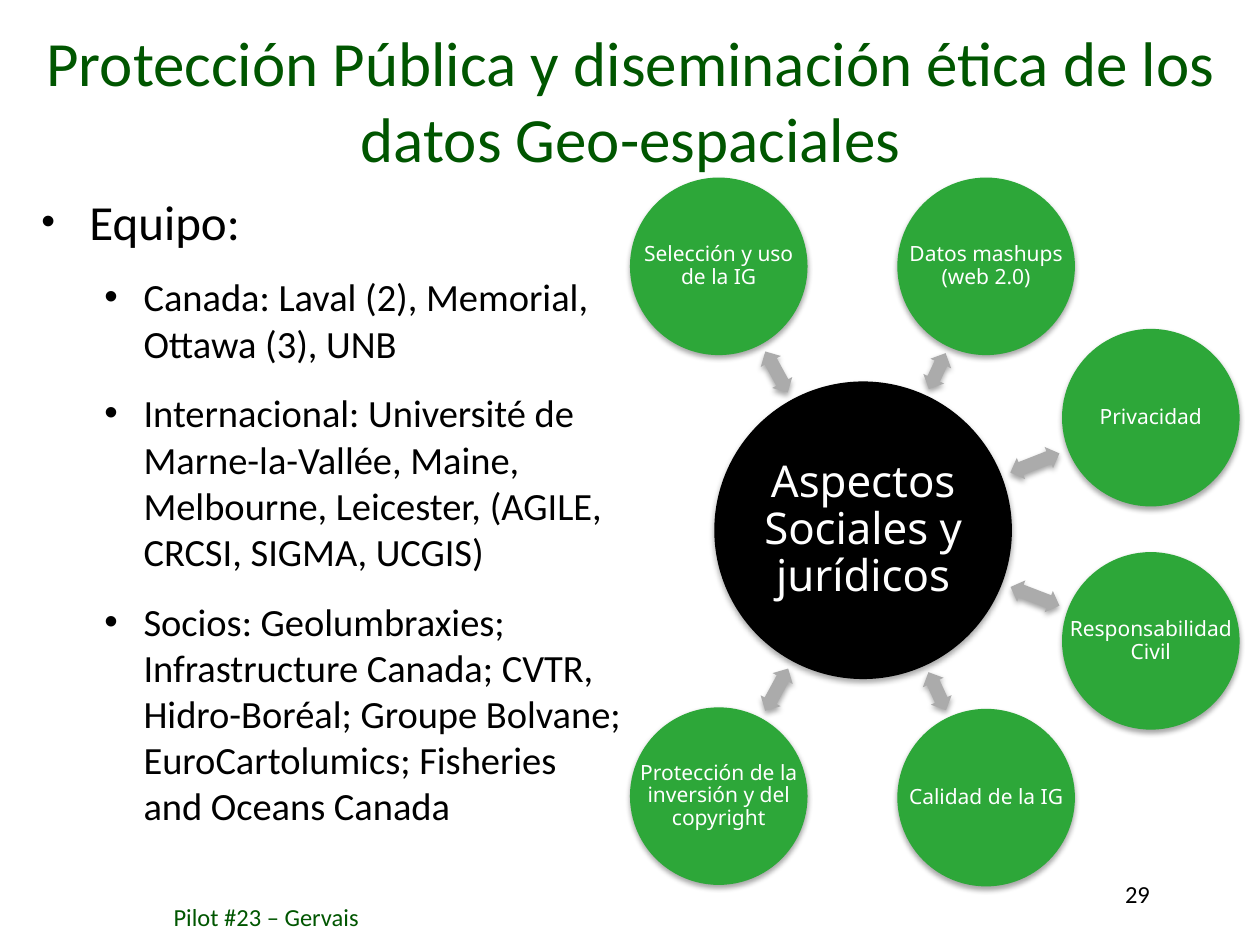
"""Build the slide on ethical dissemination of geospatial data with its hub diagram."""
from math import atan2, degrees, hypot

from lxml.etree import SubElement
from pptx import Presentation
from pptx.dml.color import RGBColor
from pptx.enum.shapes import MSO_SHAPE
from pptx.enum.text import MSO_ANCHOR, MSO_AUTO_SIZE, PP_ALIGN
from pptx.oxml.ns import qn
from pptx.util import Cm, Pt

DARK_GREEN = RGBColor(0x00, 0x56, 0x00)
GREEN = RGBColor(0x2D, 0xA7, 0x39)
GRAY = RGBColor(0xAB, 0xAB, 0xAB)
BLACK = RGBColor(0x00, 0x00, 0x00)
WHITE = RGBColor(0xFF, 0xFF, 0xFF)

HUB = (17.4, 10.69)
HUB_SIZE = 6.0
NODE_SIZE = 3.58
ARROW_HEIGHT = 0.46
NODES = [
    ("Datos mashups (web 2.0)", 19.88, 5.37),
    ("Privacidad", 23.2, 8.42),
    ("Responsabilidad Civil", 23.2, 12.92),
    ("Calidad de la IG", 19.88, 16.08),
    ("Protección de la inversión y del copyright", 14.49, 16.05),
    ("Selección y uso de la IG", 14.49, 5.37),
]
TEAM = [
    "Canada: Laval (2), Memorial, Ottawa (3), UNB",
    "Internacional: Université de Marne-la-Vallée, Maine, Melbourne, Leicester, "
    "(AGILE, CRCSI, SIGMA, UCGIS)",
    "Socios: Geolumbraxies; Infrastructure Canada; CVTR, Hidro-Boréal; Groupe Bolvane; "
    "EuroCartolumics; Fisheries\vand Oceans Canada",
]


def style(paragraph, size, color, name="Calibri"):
    paragraph.font.size = Pt(size)
    paragraph.font.name = name
    paragraph.font.color.rgb = color


def add_solid(group, kind, center, width, height, color):
    x, y = center
    shape = group.shapes.add_shape(
        kind, Cm(x - width / 2), Cm(y - height / 2), Cm(width), Cm(height))
    shape.fill.solid()
    shape.fill.fore_color.rgb = color
    shape.line.fill.background()
    shape.shadow.inherit = False
    effects = shape.element.spPr.find(qn("a:effectLst"))
    shadow = SubElement(effects, qn("a:outerShdw"), blurRad="40000", dist="23000",
                        dir="5400000", rotWithShape="0")
    tint = SubElement(shadow, qn("a:srgbClr"), val="000000")
    SubElement(tint, qn("a:alpha"), val="35000")
    return shape


deck = Presentation()
deck.slide_width, deck.slide_height = Cm(25.4), Cm(19.05)
page = deck.slides.add_slide(deck.slide_layouts[1])

title = page.shapes.title
title.left, title.top, title.width, title.height = Cm(0.41), Cm(0.41), Cm(24.61), Cm(3.18)
title.text_frame.text = "Protección Pública y diseminación ética de los datos Geo-espaciales"
title.text_frame.auto_size = MSO_AUTO_SIZE.NONE
title.text_frame.vertical_anchor = MSO_ANCHOR.MIDDLE
title.text_frame.paragraphs[0].alignment = PP_ALIGN.CENTER
style(title.text_frame.paragraphs[0], 36, DARK_GREEN)

body = page.placeholders[1]
body.left, body.top, body.width, body.height = Cm(0.58), Cm(3.96), Cm(13.28), Cm(13.49)
frame = body.text_frame
frame.auto_size = MSO_AUTO_SIZE.NONE
for index, text in enumerate(["Equipo:", *TEAM]):
    paragraph = frame.add_paragraph() if index else frame.paragraphs[0]
    paragraph.text = text
    paragraph.level = 1 if index else 0
    properties = paragraph._p.get_or_add_pPr()
    properties.set("marL", str(Cm(2.06 if index else 0.97)))
    properties.set("indent", str(Cm(-0.79 if index else -0.97)))
    SubElement(properties, qn("a:buSzPct"), val="100000" if index else "80000")
    SubElement(properties, qn("a:buFont"), typeface="Arial")
    SubElement(properties, qn("a:buChar"), char="•")
    paragraph.line_spacing = 1.0 if index else 0.8
    paragraph.space_before = Pt(13.5 if index else 0)
    style(paragraph, 22 if index else 28, BLACK)

for text, left, top, width, color in [
    ("29", 22.43, 17.6, 1.98, BLACK),
    ("Pilot #23 – Gervais", 3.25, 18.06, 7.34, DARK_GREEN),
]:
    box = page.shapes.add_textbox(Cm(left), Cm(top), Cm(width), Cm(0.86))
    box.text_frame.word_wrap = True
    box.text_frame.text = text
    style(box.text_frame.paragraphs[0], 14, color)

diagram = page.shapes.add_group_shape()
circles = [("Aspectos Sociales y jurídicos", *HUB, HUB_SIZE, 25, BLACK)]
circles += [(*node, NODE_SIZE, 12, GREEN) for node in NODES]
for text, x, y, size, font_size, color in circles:
    if (x, y) != HUB:
        across, down = x - HUB[0], y - HUB[1]
        distance = hypot(across, down)
        gap = distance - (HUB_SIZE + NODE_SIZE) / 2
        share = (HUB_SIZE + gap) / 2 / distance
        middle = (HUB[0] + across * share, HUB[1] + down * share)
        arrow = add_solid(diagram, MSO_SHAPE.LEFT_RIGHT_ARROW, middle,
                          gap * 0.74, ARROW_HEIGHT, GRAY)
        arrow.adjustments[0] = 0.6
        arrow.rotation = degrees(atan2(down, across)) % 360
    circle = add_solid(diagram, MSO_SHAPE.OVAL, (x, y), size, size, color)
    label = diagram.shapes.add_textbox(circle.left, circle.top, circle.width, circle.height)
    frame = label.text_frame
    frame.word_wrap = True
    frame.vertical_anchor = MSO_ANCHOR.MIDDLE
    frame.margin_left = frame.margin_right = frame.margin_top = frame.margin_bottom = Cm(0.05)
    frame.text = text
    paragraph = frame.paragraphs[0]
    paragraph.alignment = PP_ALIGN.CENTER
    paragraph.line_spacing = 0.9
    style(paragraph, font_size, WHITE, "Noto Sans")

deck.save("out.pptx")
